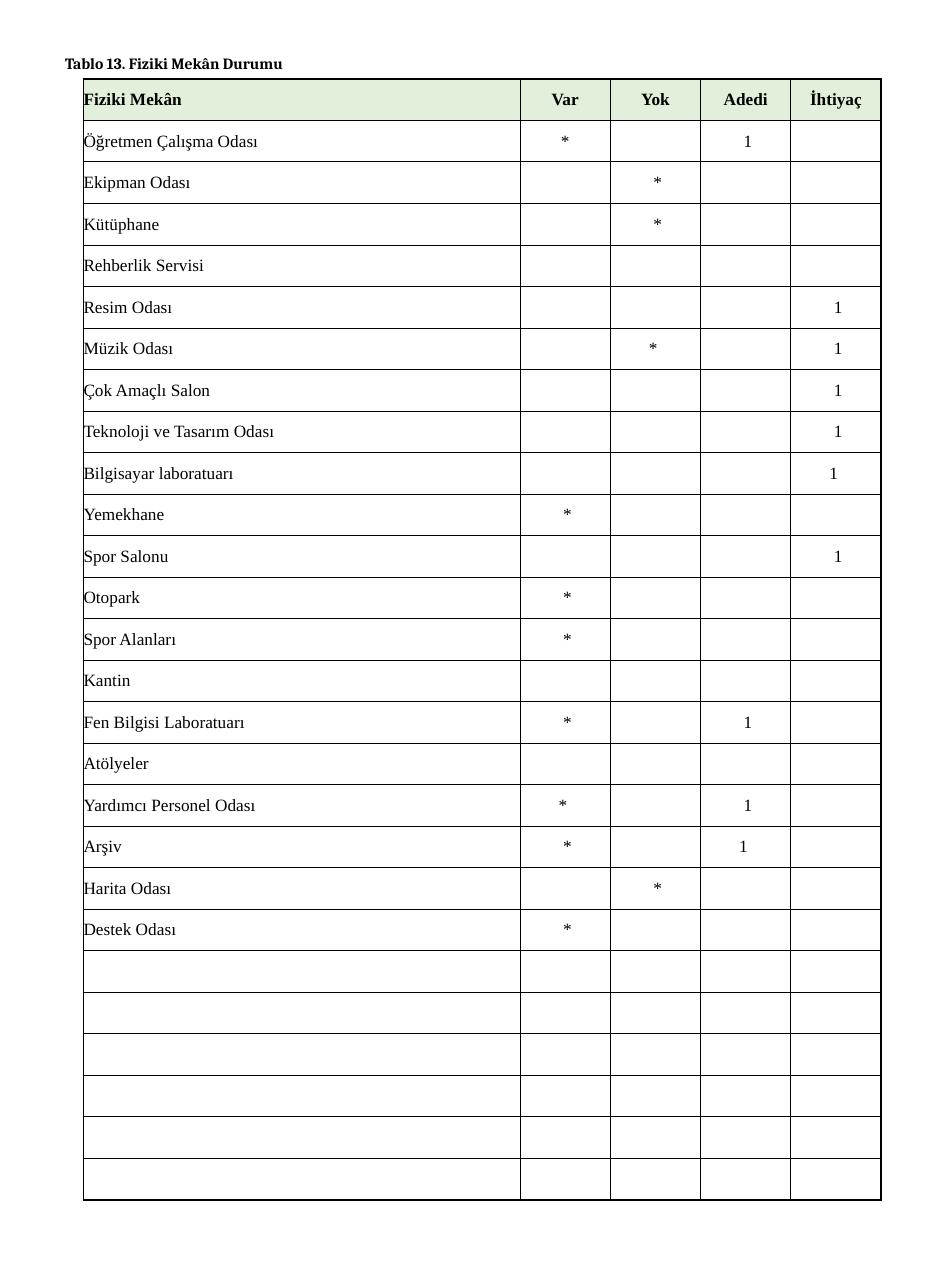
from lxml import etree
from pptx import Presentation
from pptx.dml.color import RGBColor
from pptx.enum.text import MSO_ANCHOR, PP_ALIGN
from pptx.oxml.ns import qn
from pptx.util import Inches, Pt

LEFT = PP_ALIGN.LEFT
CENTER = PP_ALIGN.CENTER
MIDDLE = MSO_ANCHOR.MIDDLE

BLACK = RGBColor(0x00, 0x00, 0x00)
WHITE = RGBColor(0xFF, 0xFF, 0xFF)
PALE_GREEN = RGBColor(0xE2, 0xEF, 0xDA)

HEADINGS = ("Fiziki Mekân", "Var", "Yok", "Adedi", "İhtiyaç")
ROOMS = [
    ("Öğretmen Çalışma Odası", "*", "", " 1", ""),
    ("Ekipman Odası", "", " *", "", ""),
    ("Kütüphane", "", " *", "", ""),
    ("Rehberlik Servisi", "", "", "", ""),
    ("Resim Odası", "", "", "", " 1"),
    ("Müzik Odası", "", "* ", "", " 1"),
    ("Çok Amaçlı Salon", "", "", "", " 1"),
    ("Teknoloji ve Tasarım Odası", "", "", "", " 1"),
    ("Bilgisayar laboratuarı", "", "", "", "1 "),
    ("Yemekhane", " *", "", "", ""),
    ("Spor Salonu", "", "", "", " 1"),
    ("Otopark", " *", "", "", ""),
    ("Spor Alanları", " *", "", "", ""),
    ("Kantin", "", "", "", ""),
    ("Fen Bilgisi Laboratuarı", " *", "", " 1", ""),
    ("Atölyeler", "", "", "", ""),
    ("Yardımcı Personel Odası", "* ", "", " 1", ""),
    ("Arşiv", " *", "", "1 ", ""),
    ("Harita Odası", "", " *", "", ""),
    ("Destek Odası", " *", "", "", ""),
]
SPARE_ROWS = 6
COLUMN_WIDTHS = (3.87, 0.8, 0.8, 0.8, 0.8)


class PageBuilder:
    title_font = "Cambria"
    table_font = "Times New Roman"
    thick = Pt(1)
    thin = Pt(0.75)

    def __init__(self, page):
        self.page = page

    def style(self, para, name, size, bold):
        para.font.name = name
        para.font.size = Pt(size)
        para.font.bold = bold
        para.font.color.rgb = BLACK

    def title(self, text, left, top, width, height, indent):
        box = self.page.shapes.add_textbox(
            Inches(left), Inches(top), Inches(width), Inches(height))
        box.text_frame.word_wrap = True
        para = box.text_frame.paragraphs[0]
        para.text = text
        para._p.get_or_add_pPr().set("marL", str(Inches(indent)))
        self.style(para, self.title_font, 10, True)

    def border(self, cell, side, width):
        line = etree.SubElement(cell._tc.get_or_add_tcPr(), qn(f"a:ln{side}"), w=str(width))
        fill = etree.SubElement(line, qn("a:solidFill"))
        etree.SubElement(fill, qn("a:srgbClr"), val=str(BLACK))

    def cell(self, cell, text, align, header, thick_sides):
        cell.margin_left = cell.margin_right = 0
        cell.margin_top = cell.margin_bottom = 0
        cell.vertical_anchor = MIDDLE
        for side in "LRTB":
            self.border(cell, side, self.thick if side in thick_sides else self.thin)
        cell.fill.solid()
        cell.fill.fore_color.rgb = PALE_GREEN if header else WHITE
        para = cell.text_frame.paragraphs[0]
        para.text = text
        para.alignment = align
        self.style(para, self.table_font, 11, header)

    def table(self, rows, widths, left, top, height):
        frame = self.page.shapes.add_table(
            len(rows), len(widths), Inches(left), Inches(top),
            Inches(sum(widths)), Inches(height))
        table = frame.table
        table.first_row = False
        table.horz_banding = False
        for column, width in zip(table.columns, widths):
            column.width = Inches(width)
        last_row, last_column = len(rows) - 1, len(widths) - 1
        for r, values in enumerate(rows):
            for c, text in enumerate(values):
                edges = {"L": c == 0, "R": c == last_column,
                         "T": r <= 1, "B": r in (0, last_row)}
                thick_sides = [side for side, thick in edges.items() if thick]
                self.cell(table.cell(r, c), text, CENTER if c else LEFT, r == 0, thick_sides)


def main():
    deck = Presentation()
    deck.slide_width = Inches(8.27)
    deck.slide_height = Inches(11.42)
    builder = PageBuilder(deck.slides.add_slide(deck.slide_layouts[6]))
    builder.title("Tablo 13. Fiziki Mekân Durumu", -0.18, 0.43, 6.83, 0.27, 0.66)
    spare = [("",) * len(HEADINGS)] * SPARE_ROWS
    builder.table([HEADINGS] + ROOMS + spare, COLUMN_WIDTHS, 0.74, 0.7, 9.94)
    deck.save("out.pptx")


if __name__ == "__main__":
    main()
